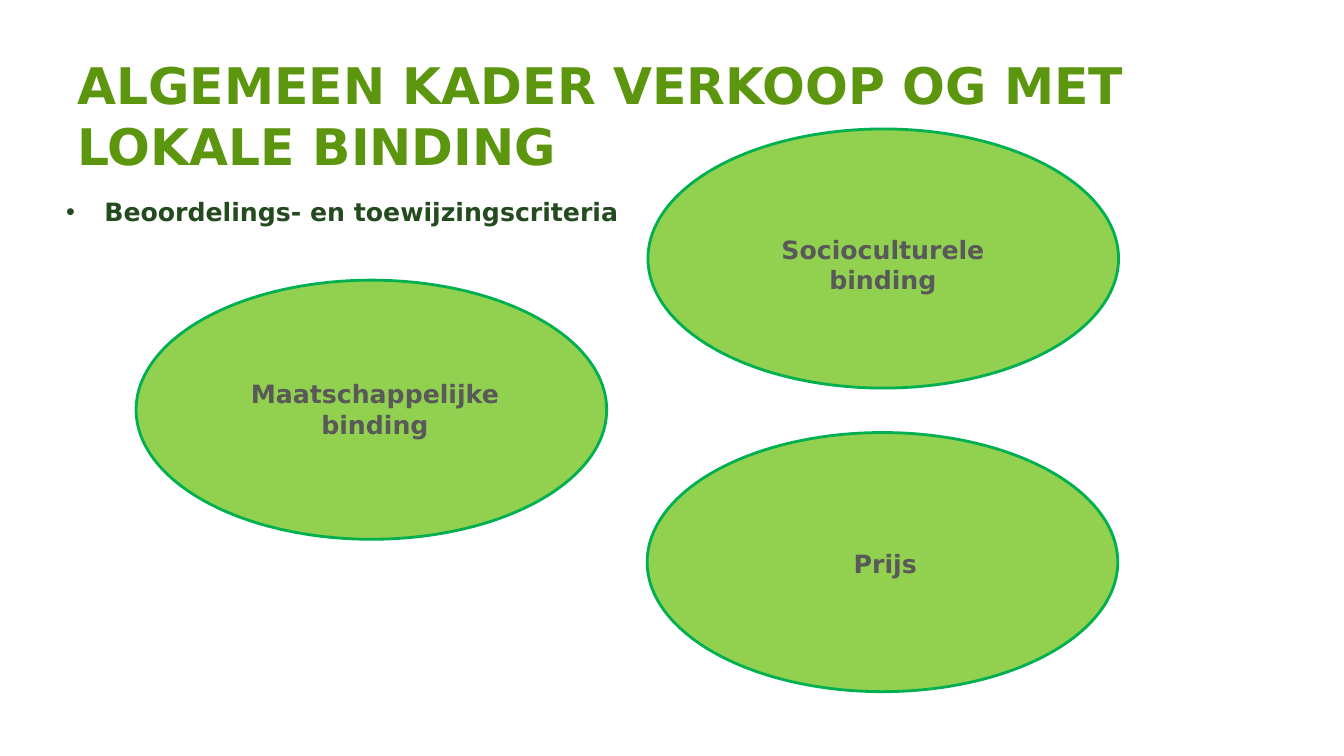
from dataclasses import dataclass

from lxml import etree
from pptx import Presentation
from pptx import util as u
from pptx.dml.color import RGBColor
from pptx.enum import shapes, text
from pptx.oxml.ns import qn


@dataclass(frozen=True)
class Theme:
    font: str = "DejaVu Sans"
    title_size: int = 36
    text_size: int = 18
    title: str = "5C960E"
    criteria: str = "244A1F"
    label: str = "595959"
    oval_fill: str = "92D050"
    oval_line: str = "00B050"


theme = Theme()


def add_text(paragraph, words, size, color, align):
    paragraph.alignment = align
    run = paragraph.add_run()
    run.text = words
    run.font.name = theme.font
    run.font.size = u.Pt(size)
    run.font.bold = True
    run.font.color.rgb = RGBColor.from_string(color)


def add_box(left, top, width, height):
    box = slide.shapes.add_textbox(u.Cm(left), u.Cm(top), u.Cm(width), u.Cm(height))
    box.text_frame.word_wrap = True
    return box.text_frame


presentation = Presentation()
presentation.slide_width = u.Cm(33.87)
presentation.slide_height = u.Cm(19.05)
slide = presentation.slides.add_slide(presentation.slide_layouts[5])

# Title
title = slide.shapes.title
title.left, title.top = u.Cm(1.7), u.Cm(1.3)
title.width, title.height = u.Cm(27.76), u.Cm(3.18)
title.text_frame.auto_size = text.MSO_AUTO_SIZE.NONE
title.text_frame.vertical_anchor = text.MSO_ANCHOR.MIDDLE
add_text(title.text_frame.paragraphs[0], "ALGEMEEN KADER VERKOOP OG MET LOKALE BINDING",
         theme.title_size, theme.title, text.PP_ALIGN.LEFT)

# Bulleted heading
criteria = add_box(1.42, 4.83, 27.76, 11.48).paragraphs[0]
properties = criteria._p.get_or_add_pPr()
properties.set("marL", str(u.Cm(0.96)))
properties.set("indent", str(-u.Cm(0.96)))
etree.SubElement(properties, qn("a:buFont"), typeface="Arial")
etree.SubElement(properties, qn("a:buChar"), char="•")
add_text(criteria, "Beoordelings- en toewijzingscriteria",
         theme.text_size, theme.criteria, text.PP_ALIGN.LEFT)

# Ovals
for left, top in [(3.43, 7.06), (16.33, 3.25), (16.31, 10.9)]:
    oval = slide.shapes.add_shape(shapes.MSO_SHAPE.OVAL, u.Cm(left), u.Cm(top),
                                  u.Cm(11.86), u.Cm(6.53))
    oval.shadow.inherit = False
    oval.fill.solid()
    oval.fill.fore_color.rgb = RGBColor.from_string(theme.oval_fill)
    oval.line.color.rgb = RGBColor.from_string(theme.oval_line)
    oval.line.width = u.Pt(2)

# Oval labels: words, place, left margin
labels = [
    ("Maatschappelijke binding", (3.68, 9.42, 9.3, 2.31), 2.49),
    ("Socioculturele binding", (19.15, 5.77, 6.2, 1.8), 0.25),
    ("Prijs", (18.08, 13.69, 8.46, 1.02), 0.25),
]
for words, place, margin in labels:
    frame = add_box(*place)
    frame.margin_left = u.Cm(margin)
    add_text(frame.paragraphs[0], words, theme.text_size, theme.label, text.PP_ALIGN.CENTER)

presentation.save("out.pptx")
